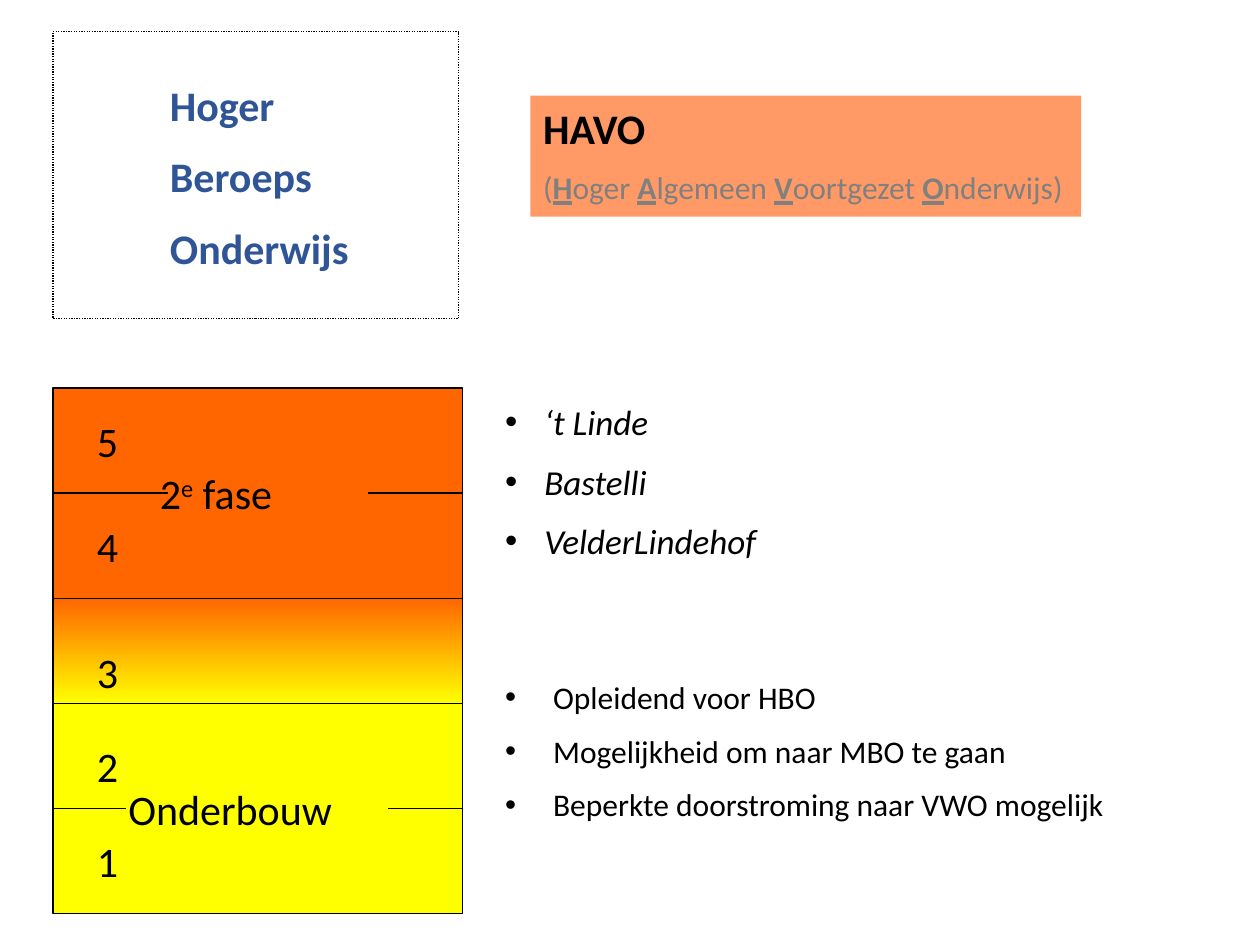
from lxml.etree import SubElement
from pptx import Presentation
from pptx.dml.color import RGBColor
from pptx.enum.dml import MSO_LINE
from pptx.enum.shapes import MSO_CONNECTOR, MSO_SHAPE
from pptx.enum.text import MSO_ANCHOR, MSO_AUTO_SIZE, PP_ALIGN
from pptx.oxml.ns import qn
from pptx.util import Inches, Pt

COLORS = {
    "black": "000000", "blue": "2F5597", "grey": "808080",
    "salmon": "FF9966", "orange": "FF6600", "yellow": "FFFF00",
}
FONT = "Calibri"
LEFT_SIDE, RIGHT_SIDE = 1, 3


def rgb(name):
    return RGBColor.from_string(COLORS[name])


def place(shape, left, top, width, height):
    shape.left, shape.top = Inches(left), Inches(top)
    shape.width, shape.height = Inches(width), Inches(height)


def style(paragraph, size, color="black", bold=False, italic=False, before=0):
    font = paragraph.font
    font.name, font.size, font.bold, font.italic = FONT, Pt(size), bold, italic
    font.color.rgb = rgb(color)
    paragraph.alignment = PP_ALIGN.LEFT
    paragraph.space_before = Pt(before)


def add_text(shapes, text, left, top, width, height, **options):
    """Add a text box with one paragraph per line; return its paragraphs."""
    box = shapes.add_textbox(*map(Inches, (left, top, width, height)))
    frame = box.text_frame
    frame.word_wrap = True
    frame.text = text
    for index, paragraph in enumerate(frame.paragraphs):
        style(paragraph, 24, before=12 if index else 0, **options)
    return frame.paragraphs


def add_rectangle(shapes, left, top, width, height):
    rectangle = shapes.add_shape(
        MSO_SHAPE.RECTANGLE, *map(Inches, (left, top, width, height)))
    rectangle.shadow.inherit = False
    rectangle.fill.background()
    rectangle.line.color.rgb = rgb("black")
    rectangle.line.width = Pt(0.75)
    return rectangle


def add_side_line(shapes, rectangle, side, inner_x):
    """Draw a level line from the middle of a rectangle's side to inner_x."""
    middle = rectangle.top + rectangle.height // 2
    line = shapes.add_connector(
        MSO_CONNECTOR.STRAIGHT, 0, middle, Inches(inner_x), middle)
    line.begin_connect(rectangle, side)
    line.line.color.rgb = rgb("black")
    line.line.width = Pt(0.75)
    SubElement(line._element.spPr, qn("a:effectLst"))


def build_heading(title, left, top, width, height):
    place(title, left, top, width, height)
    title.fill.solid()
    title.fill.fore_color.rgb = rgb("salmon")
    frame = title.text_frame
    frame.word_wrap = False
    frame.auto_size = MSO_AUTO_SIZE.NONE
    frame.vertical_anchor = MSO_ANCHOR.TOP
    frame.text = "HAVO"
    style(frame.paragraphs[0], 24, bold=True)
    full_name = frame.add_paragraph()
    style(full_name, 18, "grey", before=9)
    for text in ("(", "H", "oger ", "A", "lgemeen ", "V", "oortgezet ", "O", "nderwijs)"):
        run = full_name.add_run()
        run.text = text
        if len(text) == 1 and text.isalpha():
            run.font.bold = run.font.underline = True


def build_list(body, left, top, width, height):
    place(body, left, top, width, height)
    frame = body.text_frame
    frame.auto_size = MSO_AUTO_SIZE.NONE
    schools = ["‘t Linde", "Bastelli", "VelderLindehof"]
    features = ["Opleidend voor HBO", "Mogelijkheid om naar MBO te gaan",
                "Beperkte doorstroming naar VWO mogelijk"]
    frame.text = "\n".join(schools + features)
    group_gap = 66.5
    for index, paragraph in enumerate(frame.paragraphs):
        is_school = index < len(schools)
        size, indent = (20, 0.31) if is_school else (18, 0.38)
        before = group_gap if index == len(schools) else size / 2 if index else 0
        style(paragraph, size, italic=is_school, before=before)
        properties = paragraph._p.get_or_add_pPr()
        properties.set("marL", str(Inches(indent)))
        properties.set("indent", str(-Inches(indent)))


def build_destination(shapes, left, top, width, height):
    add_text(shapes, "Hoger\nBeroeps\nOnderwijs", left + 0.83, top + 0.33,
             2, 1.72, color="blue", bold=True)
    add_rectangle(shapes, left, top, width, height).line.dash_style = MSO_LINE.ROUND_DOT


def build_school_years(slide, left, top, width, height):
    """Stack the five school years, with the upper and lower phase named."""
    shapes = slide.shapes.add_group_shape().shapes
    year = height / 5
    upper = add_rectangle(shapes, left, top, width, 2 * year)
    bridge = add_rectangle(shapes, left, top + 2 * year, width, year)
    lower = add_rectangle(shapes, left, top + 3 * year, width, 2 * year)
    for phase, color in ((upper, "orange"), (lower, "yellow")):
        phase.fill.solid()
        phase.fill.fore_color.rgb = rgb(color)
    bridge.fill.gradient()
    bridge.fill.gradient_angle = 270
    for stop, color in zip(bridge.fill.gradient_stops, ("orange", "yellow")):
        stop.color.rgb = rgb(color)

    for number, offset in zip("54321", (0.17, 1, 2, 2.75, 3.5)):
        add_text(shapes, number, left + 0.25, top + offset, 0.5, 0.5)

    add_side_line(shapes, upper, LEFT_SIDE, left + 0.91)
    add_side_line(shapes, upper, RIGHT_SIDE, left + width - 0.75)
    add_side_line(shapes, lower, LEFT_SIDE, left + 0.58)
    add_side_line(shapes, lower, RIGHT_SIDE, left + width - 0.59)

    name = add_text(shapes, "2", left + 0.75, top + year - 0.25, 2, 0.5)[0]
    ordinal = name.add_run()
    ordinal.text = "e"
    ordinal._r.get_or_add_rPr().set("baseline", "30000")
    name.add_run().text = " fase"
    add_text(shapes, "Onderbouw", left + 0.5, top + 4 * year - 0.25, 2.33, 0.5)


def main():
    presentation = Presentation()
    presentation.slide_width, presentation.slide_height = Inches(10), Inches(7.5)
    slide = presentation.slides.add_slide(presentation.slide_layouts[1])
    build_list(slide.placeholders[1], 3.91, 3.13, 6.09, 3.67)
    build_heading(slide.shapes.title, 4.21, 0.76, 4.37, 0.96)
    build_destination(slide.shapes, 0.42, 0.25, 3.22, 2.28)
    build_school_years(slide, 0.42, 3.08, 3.25, 4.17)
    presentation.save("out.pptx")


if __name__ == "__main__":
    main()
